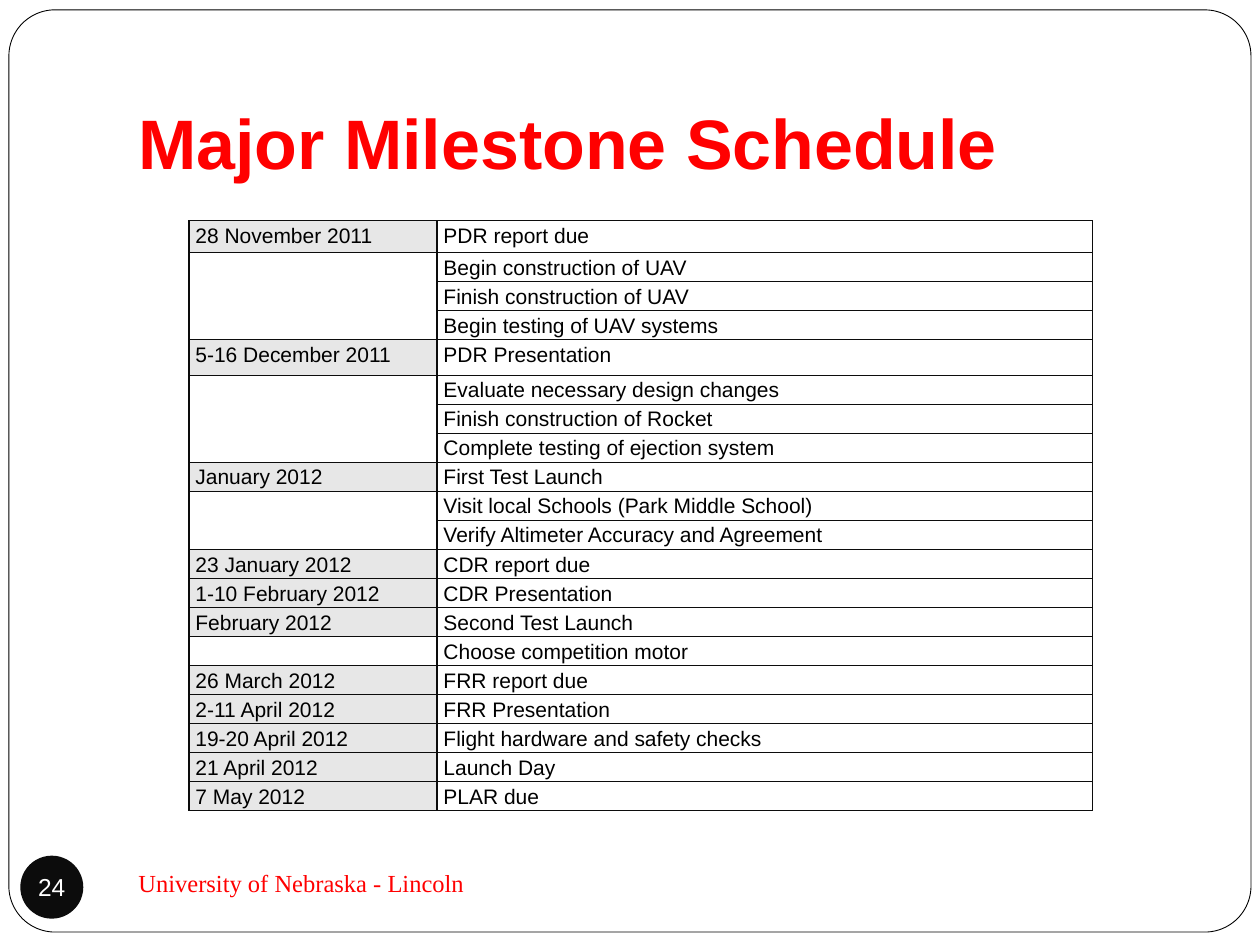
"""Build the major milestone schedule slide."""
from lxml.etree import SubElement as Sub
from pptx import Presentation
from pptx.dml.color import RGBColor as Rgb
from pptx.enum.shapes import MSO_SHAPE as Shape
from pptx.enum.text import MSO_ANCHOR as Anchor, PP_ALIGN as Align
from pptx.oxml.ns import qn
from pptx.util import Cm, Pt

TITLE = "Major Milestone Schedule"
SCHOOL = "University of Nebraska - Lincoln"
PAGE = "24"
PLAN = [
    ("28 November 2011", ["PDR report due"]),
    ("", ["Begin construction of UAV", "Finish construction of UAV",
          "Begin testing of UAV systems"]),
    ("5-16 December 2011", ["PDR Presentation"]),
    ("", ["Evaluate necessary design changes", "Finish construction of Rocket",
          "Complete testing of ejection system"]),
    ("January 2012", ["First Test Launch"]),
    ("", ["Visit local Schools (Park Middle School)",
          "Verify Altimeter Accuracy and Agreement"]),
    ("23 January 2012", ["CDR report due"]),
    ("1-10 February 2012", ["CDR Presentation"]),
    ("February 2012", ["Second Test Launch"]),
    ("", ["Choose competition motor"]),
    ("26 March 2012", ["FRR report due"]),
    ("2-11 April 2012", ["FRR Presentation"]),
    ("19-20 April 2012", ["Flight hardware and safety checks"]),
    ("21 April 2012", ["Launch Day"]),
    ("7 May 2012", ["PLAR due"]),
]
COLS = (5, 13.21)
ROW = 0.55
TALL = {0: 0.64, 4: 0.72}
THEME = {
    "red": "FF0000", "ink": "000000", "dark": "0C0C0C", "white": "FFFFFF",
    "gray": "E7E7E7", "sans": "Arial", "serif": "Times New Roman",
    "head": 40, "note": 14, "body": 12,
}


def tint(name):
    return Rgb.from_string(THEME[name])


def write(frame, text, size="body", font="sans", color="ink", bold=False,
          align=Align.LEFT, anchor=Anchor.TOP, pad=(0.25, 0.13, 0.25, 0.13),
          space=None, wrap=True):
    frame.word_wrap = wrap
    frame.vertical_anchor = anchor
    (frame.margin_left, frame.margin_top,
     frame.margin_right, frame.margin_bottom) = map(Cm, pad)
    par = frame.paragraphs[0]
    par.alignment, par.line_spacing = align, space
    run = par.add_run()
    run.text = text
    run.font.name, run.font.size = THEME[font], Pt(THEME[size])
    run.font.bold, run.font.color.rgb = bold, tint(color)


def place(shape, *box):
    shape.left, shape.top, shape.width, shape.height = map(Cm, box)


def draw(slide, kind, box, fill):
    shape = slide.shapes.add_shape(kind, *map(Cm, box))
    shape.shadow.inherit = False
    shape.fill.solid()
    shape.fill.fore_color.rgb = tint(fill)
    return shape


def edge(cell):
    props = cell._tc.get_or_add_tcPr()
    for side in ("lnL", "lnR", "lnT", "lnB"):
        line = Sub(props, qn(f"a:{side}"), w=str(Pt(1)))
        Sub(Sub(line, qn("a:solidFill")), qn("a:srgbClr"), val=THEME["dark"])


def fill_cell(cell, text, color):
    edge(cell)
    cell.fill.solid()
    cell.fill.fore_color.rgb = tint(color)
    cell.margin_left = cell.margin_right = Cm(0.13)
    cell.margin_top = cell.margin_bottom = 0
    if text:
        write(cell.text_frame, text, pad=(0, 0, 0, 0), space=1.15)
    else:
        end = cell.text_frame.paragraphs[0]._p.get_or_add_endParaRPr()
        end.set("sz", str(THEME["body"] * 100))


def add_plan(slide):
    count = sum(len(tasks) for _, tasks in PLAN)
    highs = [TALL.get(i, ROW) for i in range(count)]
    box = (3.81, 4.45, sum(COLS), sum(highs))
    grid = slide.shapes.add_table(count, len(COLS), *map(Cm, box)).table
    grid.first_row = grid.horz_banding = False
    for col, wide in zip(grid.columns, COLS):
        col.width = Cm(wide)
    for row, high in zip(grid.rows, highs):
        row.height = Cm(high)
    top = 0
    for date, tasks in PLAN:
        for i, task in enumerate(tasks, top):
            fill_cell(grid.cell(i, 0), date, "gray" if date else "white")
            fill_cell(grid.cell(i, 1), task, "white")
        if len(tasks) > 1:
            grid.cell(top, 0).merge(grid.cell(top + len(tasks) - 1, 0))
        top += len(tasks)


def main():
    deck = Presentation()
    deck.slide_width, deck.slide_height = Cm(25.4), Cm(19.05)
    slide = deck.slides.add_slide(deck.slide_layouts[5])

    frame = draw(slide, Shape.ROUNDED_RECTANGLE, (0.18, 0.2, 25.04, 18.59), "white")
    frame.adjustments[0] = 0.05
    frame.line.color.rgb, frame.line.width = tint("ink"), Pt(0.5)
    slide.shapes._spTree.insert(2, frame._element)

    title = slide.shapes.title
    place(title, 2.54, 0.76, 21.59, 3.18)
    write(title.text_frame, TITLE, size="head", color="red", bold=True,
          anchor=Anchor.BOTTOM, pad=(0.25, 0.13, 0.25, 0.25))

    foot = slide.shapes.add_textbox(*map(Cm, (2.54, 17.15, 11, 1.27)))
    write(foot.text_frame, SCHOOL, size="note", font="serif", color="red",
          anchor=Anchor.MIDDLE)

    disc = draw(slide, Shape.OVAL, (0.41, 17.25, 1.27, 1.27), "dark")
    disc.line.fill.background()
    write(disc.text_frame, PAGE, size="note", color="white", align=Align.CENTER,
          anchor=Anchor.MIDDLE, pad=(0, 0, 0, 0), wrap=False)

    add_plan(slide)
    deck.save("out.pptx")


if __name__ == "__main__":
    main()
